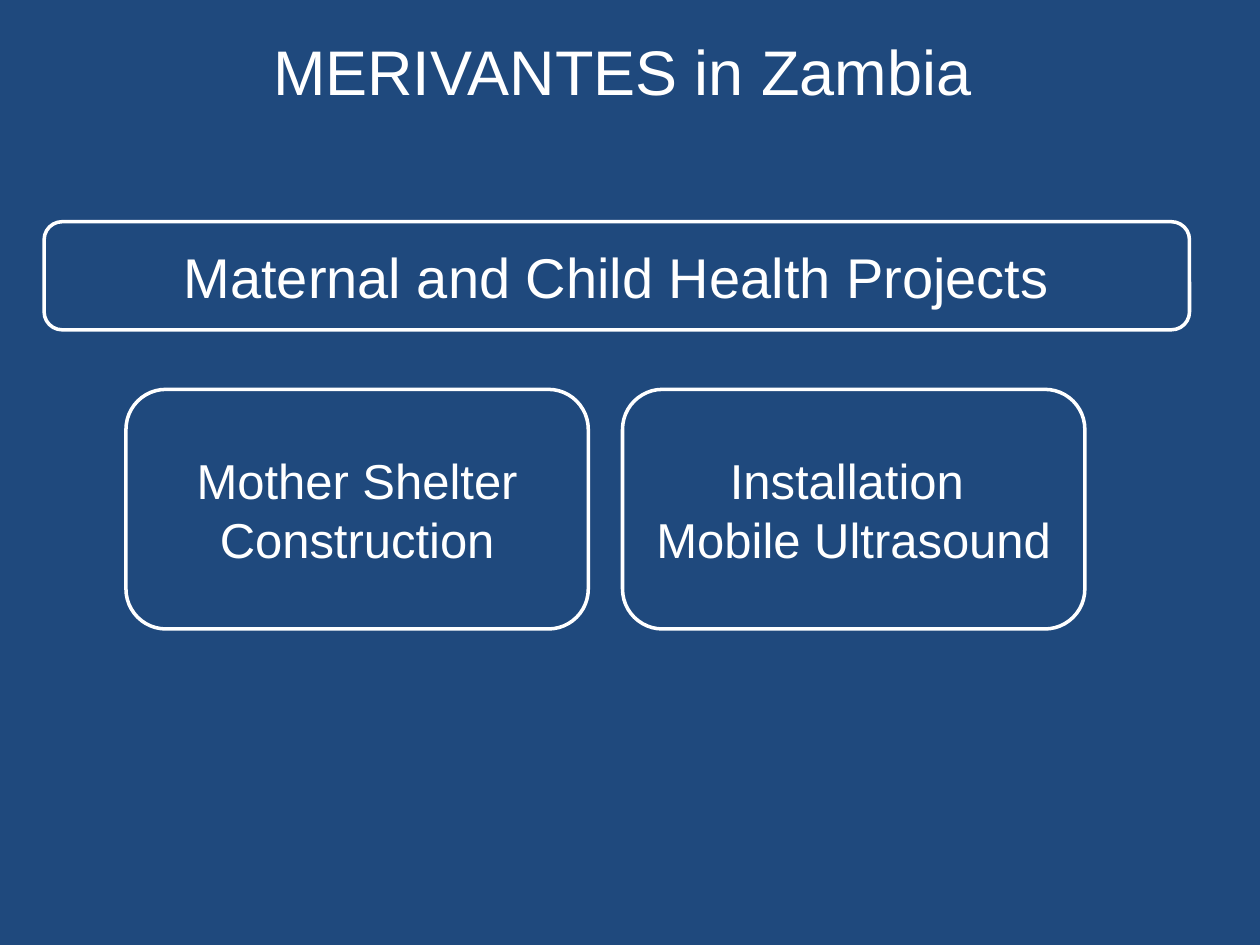
from pptx import Presentation
from pptx.dml.color import RGBColor
from pptx.enum import shapes, text
from pptx.util import Cm, Pt

COLORS = {"navy": "1F497D", "white": "FFFFFF"}


def color(name):
    return RGBColor.from_string(COLORS[name])


def write(sp, content, size):
    tf = sp.text_frame
    frame_format = {
        "word_wrap": True,
        "auto_size": text.MSO_AUTO_SIZE.NONE,
        "vertical_anchor": text.MSO_ANCHOR.MIDDLE,
    }
    for name, value in frame_format.items():
        setattr(tf, name, value)
    p = tf.paragraphs[0]
    p.text = content
    p.alignment = text.PP_ALIGN.CENTER
    for r in p.runs:
        for name, value in {"name": "Arial", "size": Pt(size)}.items():
            setattr(r.font, name, value)
        r.font.color.rgb = color("white")


def add_backdrop(s):
    sp = s.shapes.add_shape(
        shapes.MSO_SHAPE.RECTANGLE, Cm(-0.66), 0, Cm(26.06), Cm(19.05)
    )
    sp.shadow.inherit = False
    sp.fill.solid()
    sp.fill.fore_color.rgb = color("navy")
    sp.line.fill.background()
    s.shapes.title.element.addprevious(sp.element)


def set_title(s, content):
    title = s.shapes.title
    box = {"left": 1.12, "top": 0.43, "width": 22.86, "height": 1.96}
    for name, value in box.items():
        setattr(title, name, Cm(value))
    write(title, content, 36)


def add_box(s, content, size, left, top, width, height):
    sp = s.shapes.add_shape(
        shapes.MSO_SHAPE.FLOWCHART_ALTERNATE_PROCESS,
        Cm(left), Cm(top), Cm(width), Cm(height),
    )
    sp.shadow.inherit = False
    sp.fill.background()
    sp.line.color.rgb = color("white")
    sp.line.width = Pt(2)
    write(sp, content, size)


def main():
    prs = Presentation()
    prs.slide_width, prs.slide_height = Cm(25.4), Cm(19.05)
    s = prs.slides.add_slide(prs.slide_layouts[5])
    add_backdrop(s)
    set_title(s, "MERIVANTES in Zambia")
    add_box(s, "Maternal and Child Health Projects", 32, 0.89, 4.47, 23.09, 2.18)
    projects = ["Mother Shelter Construction", "Installation \nMobile Ultrasound"]
    for i, project in enumerate(projects):
        add_box(s, project, 28, 2.54 + 10.01 * i, 7.85, 9.32, 4.83)
    prs.save("out.pptx")


if __name__ == "__main__":
    main()
